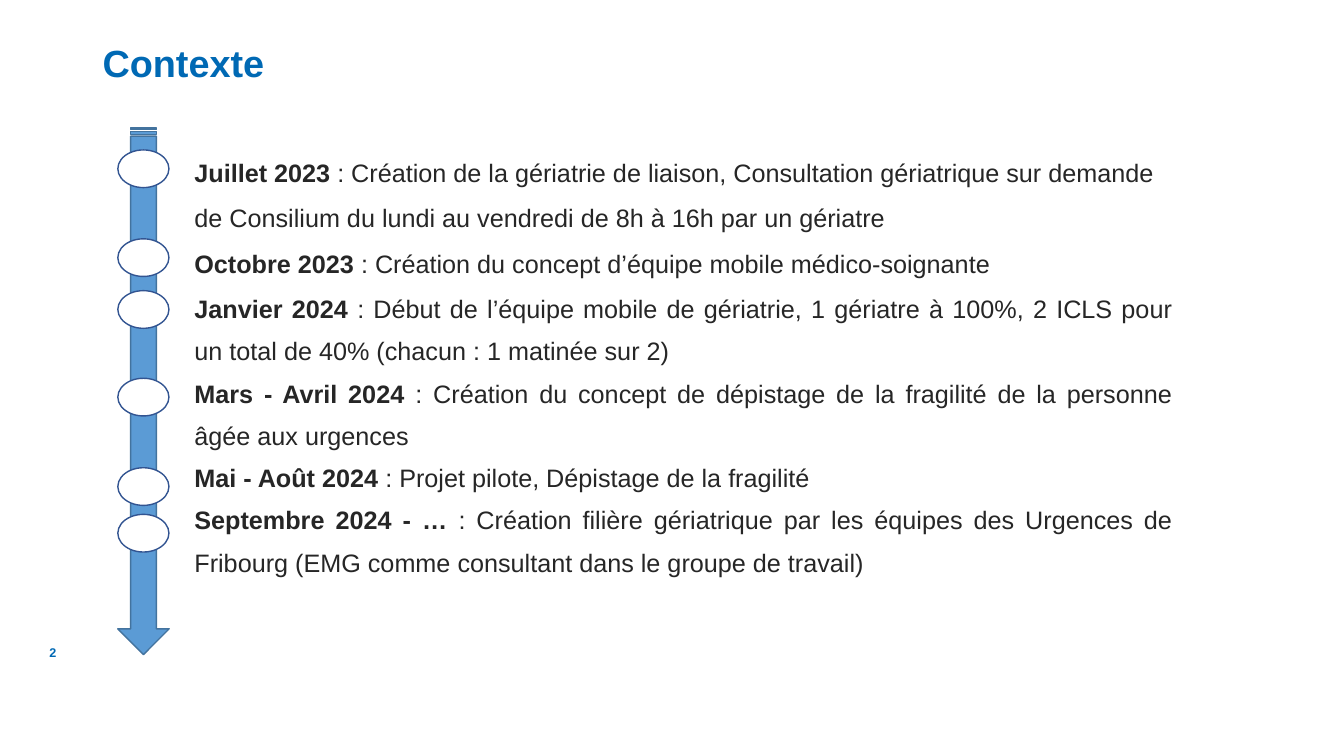
"""Build the "Contexte" slide: a vertical timeline of a geriatric liaison team."""
from dataclasses import dataclass

from pptx import Presentation
from pptx import util as u
from pptx.dml import color
from pptx.enum import shapes, text
from pptx.shapes.autoshape import Shape
from pptx.slide import Slide


@dataclass(frozen=True)
class Theme:
    font: str = "Arial"
    accent: str = "0069B4"
    ink: str = "262626"
    arrow_fill: str = "5B9BD5"
    arrow_edge: str = "43739E"
    marker_fill: str = "FFFFFF"
    marker_edge: str = "325491"
    edge_width: float = 1
    title_size: float = 27
    body_size: float = 18
    number_size: float = 9


@dataclass(frozen=True)
class Box:
    left: float
    top: float
    width: float
    height: float

    def lengths(self) -> list[u.Length]:
        return [u.Pt(side) for side in (self.left, self.top, self.width, self.height)]


@dataclass(frozen=True)
class Entry:
    date: str
    event: str = ""
    align: text.PP_ALIGN = text.PP_ALIGN.JUSTIFY


@dataclass(frozen=True)
class Passage:
    box: Box
    entries: list[Entry]
    size: float
    ink: str
    spacing: float = 1.0
    anchor: text.MSO_ANCHOR = text.MSO_ANCHOR.TOP


@dataclass(frozen=True)
class Figure:
    kind: shapes.MSO_SHAPE
    box: Box
    fill: str
    edge: str
    rotation: float = 0


THEME = Theme()
LEFT, CENTER = text.PP_ALIGN.LEFT, text.PP_ALIGN.CENTER
MARKER_TOPS = (107.1, 170.6, 207.6, 270.2, 334.1, 367.4)

PASSAGES = [
    Passage(Box(0, 455, 75.6, 21.6), [Entry("2", align=CENTER)],
            THEME.number_size, THEME.accent, anchor=text.MSO_ANCHOR.MIDDLE),
    Passage(Box(66.2, 28.8, 828, 37.4), [Entry("Contexte", align=LEFT)],
            THEME.title_size, THEME.accent, 0.9),
    Passage(Box(131.8, 97.9, 712.8, 115.9), [
        Entry("Juillet 2023 ", ": Création de la gériatrie de liaison, Consultation gériatrique "
              "sur demande de Consilium du lundi au vendredi de 8h à 16h par un gériatre", LEFT),
        Entry("Octobre 2023 ", ": Création du concept d’équipe mobile médico-soignante"),
    ], THEME.body_size, THEME.ink, 1.5),
    Passage(Box(131.8, 197.3, 712.8, 231.1), [
        Entry("Janvier 2024 ", ": Début de l’équipe mobile de gériatrie, 1 gériatre à 100%, "
              "2 ICLS pour un total de 40% (chacun : 1 matinée sur 2)"),
        Entry("Mars - Avril 2024 ", ": Création du concept de dépistage de la fragilité "
              "de la personne âgée aux urgences"),
        Entry("Mai - Août 2024 ", ": Projet pilote, Dépistage de la fragilité"),
        Entry("Septembre 2024 - … ", ": Création filière gériatrique par les équipes des "
              "Urgences de Fribourg (EMG comme consultant dans le groupe de travail)"),
    ], THEME.body_size, THEME.ink, 1.4),
]

TIMELINE = [
    Figure(shapes.MSO_SHAPE.STRIPED_RIGHT_ARROW, Box(-85.5, 261.2, 376, 36.7),
           THEME.arrow_fill, THEME.arrow_edge, 90),
    *(Figure(shapes.MSO_SHAPE.OVAL, Box(84.2, top, 36.5, 26.9),
             THEME.marker_fill, THEME.marker_edge) for top in MARKER_TOPS),
]


def apply(target: object, formats: dict[str, object]) -> None:
    for attribute, value in formats.items():
        setattr(target, attribute, value)


def draw_passage(slide: Slide, passage: Passage) -> None:
    frame = slide.shapes.add_textbox(*passage.box.lengths()).text_frame
    apply(frame, {"word_wrap": True, "vertical_anchor": passage.anchor})
    for index, entry in enumerate(passage.entries):
        paragraph = frame.add_paragraph() if index else frame.paragraphs[0]
        apply(paragraph, {"alignment": entry.align, "line_spacing": passage.spacing})
        for words, bold in ((entry.date, True), (entry.event, False)):
            if words:
                run = paragraph.add_run()
                run.text = words
                apply(run.font, {"name": THEME.font, "size": u.Pt(passage.size), "bold": bold})
                run.font.color.rgb = color.RGBColor.from_string(passage.ink)


def draw_figure(slide: Slide, figure: Figure) -> Shape:
    drawn = slide.shapes.add_shape(figure.kind, *figure.box.lengths())
    drawn.rotation = figure.rotation
    drawn.shadow.inherit = False
    drawn.fill.solid()
    drawn.fill.fore_color.rgb = color.RGBColor.from_string(figure.fill)
    drawn.line.color.rgb = color.RGBColor.from_string(figure.edge)
    drawn.line.width = u.Pt(THEME.edge_width)
    return drawn


def main() -> None:
    deck = Presentation()
    apply(deck, {"slide_width": u.Pt(960), "slide_height": u.Pt(540)})
    contexte = deck.slides.add_slide(deck.slide_layouts[6])
    for figure in TIMELINE:
        draw_figure(contexte, figure)
    for passage in PASSAGES:
        draw_passage(contexte, passage)
    deck.save("out.pptx")


if __name__ == "__main__":
    main()
